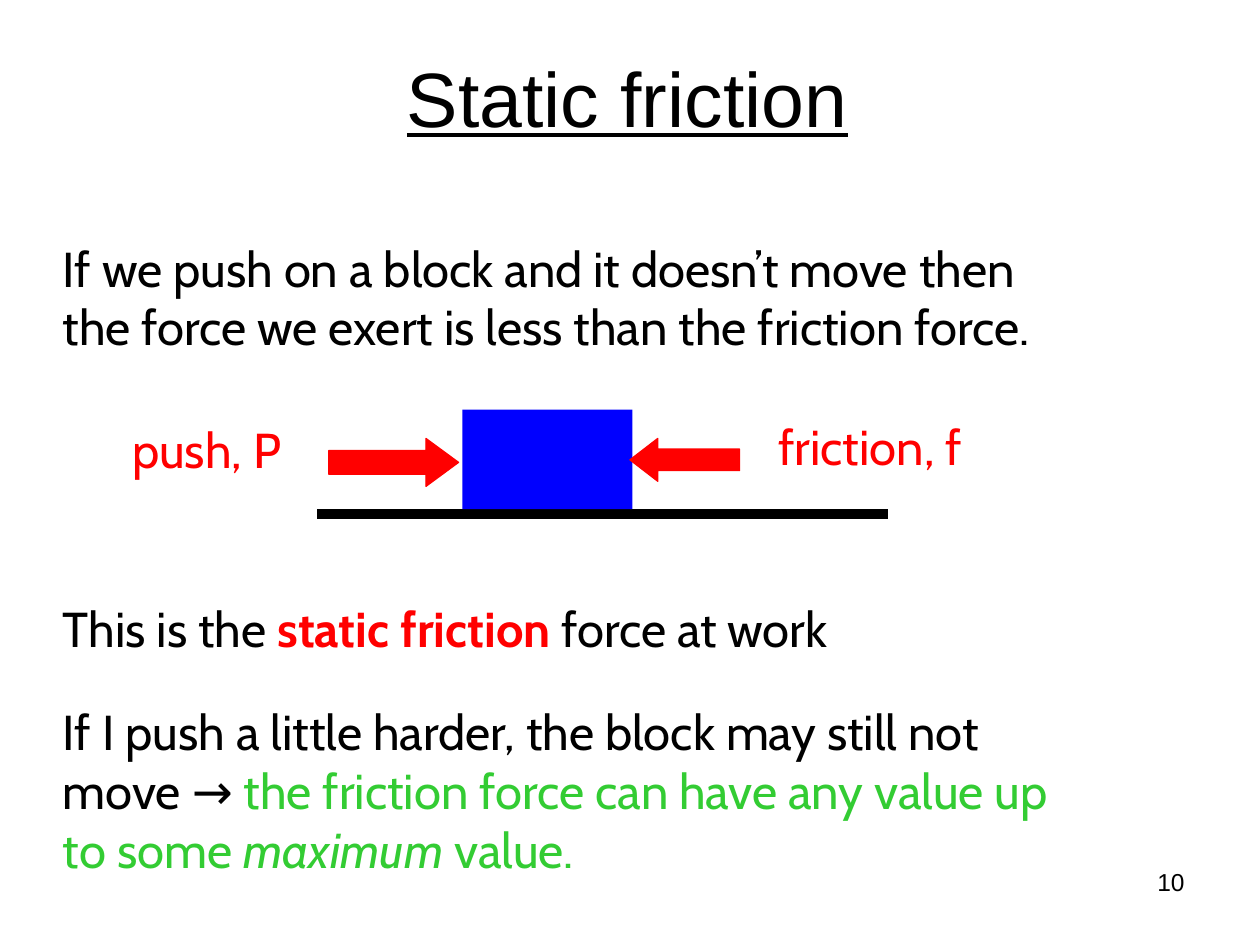
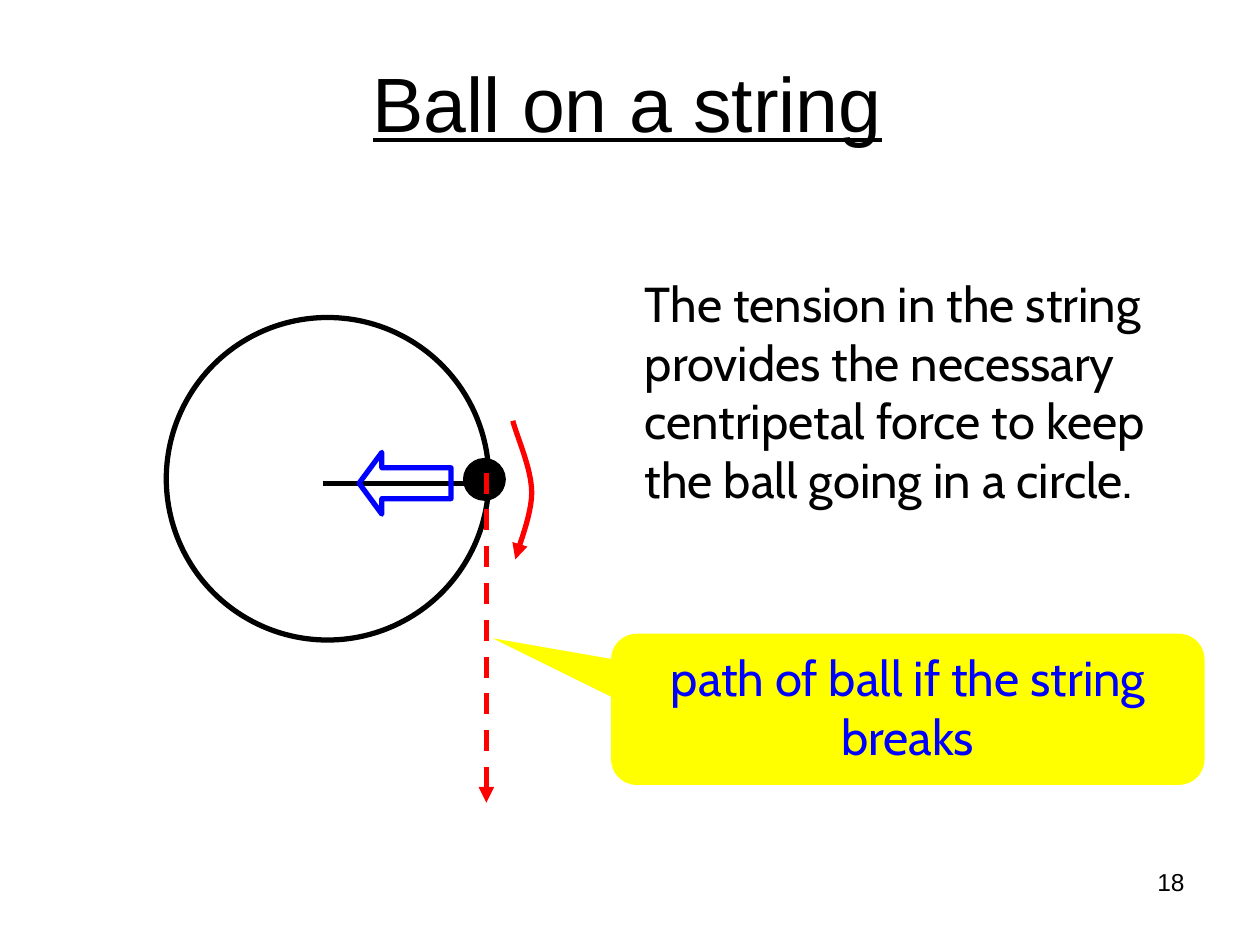
from collections import namedtuple

from pptx import Presentation
from pptx.dml.color import RGBColor
from pptx.enum.dml import MSO_LINE
from pptx.enum.shapes import MSO_CONNECTOR, MSO_SHAPE
from pptx.enum.text import MSO_ANCHOR, MSO_AUTO_SIZE, PP_ALIGN
from pptx.oxml.ns import qn
from pptx.util import Inches, Pt
from lxml.etree import SubElement

COLORS = {
    "black": "000000",
    "red": "FF0000",
    "blue": "0000FF",
    "green": "33CC33",
    "yellow": "FFFF00",
}
TITLE_FONT = "Arial"
BODY_FONT = "Cabin"
BODY_SIZE = 28

Box = namedtuple("Box", "left top width height")
Span = namedtuple("Span", "text color bold italic", defaults=("black", False, False))


def color(name):
    return RGBColor.from_string(COLORS[name])


def inches(box):
    return [Inches(value) for value in box]


# Text

def format_span(run, size, font, color_name):
    run.font.size = Pt(size)
    run.font.name = font
    run.font.color.rgb = color(color_name)


def write_lines(frame, lines, size=BODY_SIZE, font=BODY_FONT, align=PP_ALIGN.LEFT):
    """Each line is a list of spans and becomes one paragraph."""
    frame.word_wrap = True
    for index, spans in enumerate(lines):
        para = frame.paragraphs[0] if index == 0 else frame.add_paragraph()
        para.alignment = align
        for span in spans:
            run = para.add_run()
            run.text = span.text
            format_span(run, size, font, span.color)
            run.font.bold = span.bold
            run.font.italic = span.italic


def add_text(shapes, box, lines, **style):
    text_box = shapes.add_textbox(*inches(box))
    write_lines(text_box.text_frame, lines, **style)
    return text_box


def plain(*texts, color_name="black"):
    return [[Span(text, color_name)] for text in texts]


# Shapes and lines

def style_line(line, color_name, width, arrow=False, dash=None):
    line.color.rgb = color(color_name)
    line.width = Pt(width)
    if dash:
        line.dash_style = dash
    if arrow:
        SubElement(line._get_or_add_ln(), qn("a:tailEnd"), type="triangle")


def style_shape(shape, fill=None, line=None, width=0.75):
    shape.shadow.inherit = False
    if fill:
        shape.fill.solid()
        shape.fill.fore_color.rgb = color(fill)
    else:
        shape.fill.background()
    if line:
        style_line(shape.line, line, width)
    else:
        shape.line.fill.background()


def add_preset(shapes, kind, box, adjust=(), **style):
    shape = shapes.add_shape(kind, *inches(box))
    for index, value in enumerate(adjust):
        shape.adjustments[index] = value
    style_shape(shape, **style)
    return shape


def add_line(shapes, start, end, color_name, width, **style):
    line = shapes.add_connector(MSO_CONNECTOR.STRAIGHT, *inches(start + end))
    style_line(line.line, color_name, width, **style)
    SubElement(line._element.spPr, qn("a:effectLst"))
    return line


def curve_points(p0, p1, p2, p3, steps=12):
    """Points along a cubic curve, after its start."""
    for step in range(1, steps + 1):
        t = step / steps
        weights = ((1 - t) ** 3, 3 * t * (1 - t) ** 2, 3 * t ** 2 * (1 - t), t ** 3)
        yield tuple(
            Inches(sum(weight * point[axis] for weight, point in zip(weights, (p0, p1, p2, p3))))
            for axis in (0, 1)
        )


# Shared parts of every slide

def add_page(deck, title, title_top, number):
    page = deck.slides.add_slide(deck.slide_layouts[5])
    heading = page.shapes.title
    heading.left, heading.top, heading.width, heading.height = inches(
        Box(0.48, title_top, 9, 1.25)
    )
    frame = heading.text_frame
    frame.text = title
    frame.word_wrap = True
    frame.auto_size = MSO_AUTO_SIZE.NONE
    frame.vertical_anchor = MSO_ANCHOR.MIDDLE
    para = frame.paragraphs[0]
    para.alignment = PP_ALIGN.CENTER
    format_span(para.runs[0], 44, TITLE_FONT, "black")
    para.runs[0].font.underline = True
    add_text(page.shapes, Box(7.17, 6.83, 2.33, 0.52), plain(str(number)),
             size=14, font=TITLE_FONT, align=PP_ALIGN.RIGHT)
    return page


# Static friction

def draw_block_forces(page, box):
    shapes = page.shapes.add_group_shape().shapes
    left, top = box.left, box.top
    floor = top + box.height

    # Floor and block
    add_line(shapes, (left + 1.57, floor), (left + 6.1, floor), "black", 6)
    add_preset(shapes, MSO_SHAPE.RECTANGLE, Box(left + 2.72, top, 1.35, 0.79), fill="blue")

    # Opposing force arrows
    for kind, arrow_box, head in (
        (MSO_SHAPE.RIGHT_ARROW, Box(left + 1.66, top + 0.23, 1.03, 0.38), 0.68),
        (MSO_SHAPE.LEFT_ARROW, Box(left + 4.05, top + 0.23, 0.87, 0.34), 0.65),
    ):
        add_preset(shapes, kind, arrow_box, (0.5, head), fill="red", line="red")

    # Force labels
    for label, label_box in (
        ("push, P", Box(left, top + 0.03, 1.48, 0.57)),
        ("friction, f", Box(left + 5.13, top + 0.01, 1.74, 0.57)),
    ):
        add_text(shapes, label_box, plain(label, color_name="red"))


def build_static_friction(deck):
    page = add_page(deck, "Static friction", 0.14, 10)
    margin = 0.4
    add_text(page.shapes, Box(margin, 1.84, 8.45, 1.03), plain(
        "If we push on a block and it doesn’t move then",
        "the force we exert is less than the friction force.",
    ))
    draw_block_forces(page, Box(0.95, 3.25, 6.87, 0.83))
    add_text(page.shapes, Box(margin, 4.7, 7.08, 0.57), [[
        Span("This is the "),
        Span("static friction", "red", bold=True),
        Span(" force at work"),
    ]])
    add_text(page.shapes, Box(margin, 5.52, 8.58, 1.5), [
        [Span("If I push a little harder, the block may still not")],
        [Span("move → "), Span("the friction force can have any value up", "green")],
        [Span("to some ", "green"), Span("maximum", "green", italic=True),
         Span(" value.", "green")],
    ])


# Ball on a string

def draw_orbit(page, box):
    shapes = page.shapes
    left, top = box.left, box.top

    # Orbit, ball and string
    add_preset(shapes, MSO_SHAPE.OVAL, box, line="black", width=3)
    add_preset(shapes, MSO_SHAPE.OVAL, Box(left + 2.36, top + 1.12, 0.33, 0.33),
               fill="black", line="black")
    add_line(shapes, (left + 1.24, top + 1.32), (left + 2.39, top + 1.32), "black", 3)

    # Direction of motion
    bends = [(left + x, top + y) for x, y in (
        (2.75, 0.82), (2.78, 0.94), (2.9, 1.2), (2.9, 1.39),
        (2.9, 1.57), (2.79, 1.83), (2.77, 1.92),
    )]
    builder = shapes.build_freeform(*inches(bends[0]))
    for first in (0, 3):
        builder.add_line_segments(curve_points(*bends[first:first + 4]), close=False)
    motion = builder.convert_to_shape()
    style_shape(motion)
    style_line(motion.line, "red", 3, arrow=True)

    # Tension arrow and path after the string breaks
    add_preset(shapes, MSO_SHAPE.LEFT_ARROW, Box(left + 1.53, top + 1.07, 0.73, 0.49),
               (0.5, 0.37), line="blue", width=3)
    add_line(shapes, (left + 2.54, top + 1.23), (left + 2.54, top + 3.85), "red", 3,
             arrow=True, dash=MSO_LINE.DASH)


def draw_callout(page, box):
    callout = add_preset(page.shapes, MSO_SHAPE.ROUNDED_RECTANGULAR_CALLOUT, box,
                         (-0.7, -0.47, 0.17), fill="yellow")
    callout.text_frame.vertical_anchor = MSO_ANCHOR.TOP
    write_lines(callout.text_frame,
                plain("path of ball if the string", "breaks", color_name="blue"),
                align=PP_ALIGN.CENTER)


def build_ball_on_string(deck):
    page = add_page(deck, "Ball on a string", 0.18, 18)
    draw_orbit(page, Box(1.32, 2.52, 2.56, 2.56))
    add_text(page.shapes, Box(5.02, 2.12, 4.51, 1.97), plain(
        "The tension in the string",
        "provides the necessary",
        "centripetal force to keep",
        "the ball going in a circle.",
    ))
    draw_callout(page, Box(4.85, 5.03, 4.71, 1.2))


def main():
    deck = Presentation()
    deck.slide_width, deck.slide_height = Inches(10), Inches(7.5)
    build_static_friction(deck)
    build_ball_on_string(deck)
    deck.save("out.pptx")


if __name__ == "__main__":
    main()
